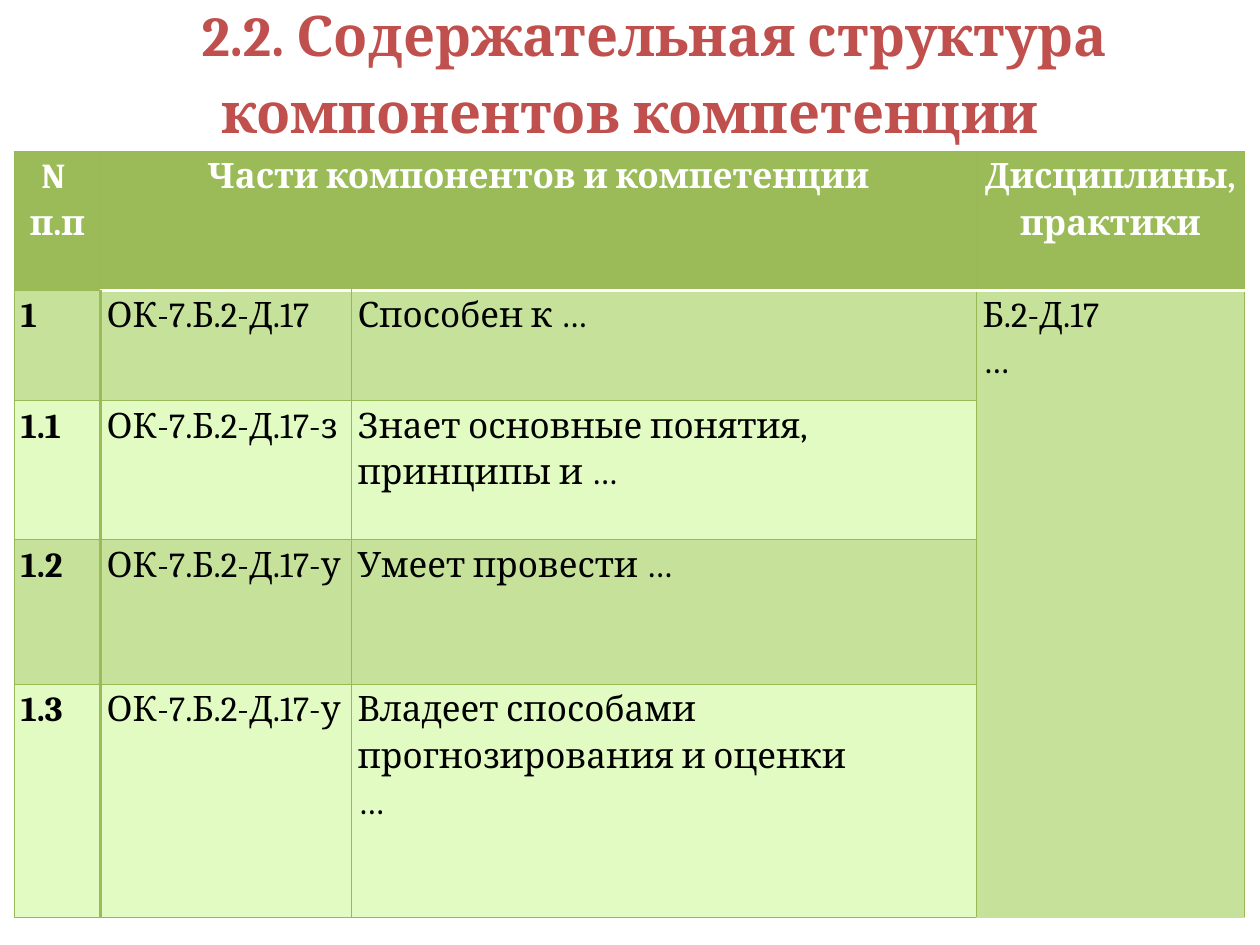
from lxml.etree import SubElement
from pptx import Presentation
from pptx.dml.color import RGBColor
from pptx.enum.text import MSO_ANCHOR, PP_ALIGN
from pptx.oxml.ns import qn
from pptx.util import Cm, Pt

HUES = {"title": "C0504D", "head": "9BBB59", "band": "C6E29A", "pale": "E2FBC2",
        "edge": "98B955", "white": "FFFFFF", "black": "000000"}


def write(frame, lines, size, hue, bold, align):
    """Put each line in its own paragraph."""
    frame.word_wrap = True
    for i, line in enumerate(lines):
        para = frame.paragraphs[0] if i == 0 else frame.add_paragraph()
        para.alignment = align
        para.line_spacing = 1.15
        for j, part in enumerate(line.split("\n")):
            if j:
                para.add_line_break()
            run = para.add_run()
            run.text = part
            run.font.name = "Cambria"
            run.font.size = Pt(size)
            run.font.bold = bold
            run.font.color.rgb = RGBColor.from_string(HUES[hue])


def rule(cell, edges):
    """Draw the left, right, top and bottom borders, given as (hue, points)."""
    props = cell._tc.get_or_add_tcPr()
    for i, (side, (hue, width)) in enumerate(zip("LRTB", edges)):
        line = SubElement(props, qn("a:ln" + side), w=str(Pt(width)))
        fill = SubElement(line, qn("a:solidFill"))
        SubElement(fill, qn("a:srgbClr"), val=HUES[hue])
        props.insert(i, line)


deck = Presentation()
deck.slide_width, deck.slide_height = Cm(25.4), Cm(19.05)
slide = deck.slides.add_slide(deck.slide_layouts[6])

# Title
title = slide.shapes.add_textbox(0, 0, Cm(25.4), Cm(2.72)).text_frame
title.vertical_anchor = MSO_ANCHOR.MIDDLE
write(title, ["2.2. Содержательная структура \nкомпонентов компетенции"],
      32, "title", True, PP_ALIGN.CENTER)
title.paragraphs[0]._p.get_or_add_pPr().set("indent", str(Cm(1.25)))

# Table
rows = [
    [["N ", "п.п"], ["Части компонентов и компетенции"], [], ["Дисциплины, ", "практики"]],
    [["1"], ["ОК-7.Б.2-Д.17"], ["Способен к …"], ["Б.2-Д.17", "…"]],
    [["1.1"], ["ОК-7.Б.2-Д.17-з"], ["Знает основные понятия, принципы и …"], []],
    [["1.2"], ["ОК-7.Б.2-Д.17-у"], ["Умеет провести …"], []],
    [["1.3"], ["ОК-7.Б.2-Д.17-у"],
     ["Владеет способами прогнозирования и оценки", "…"], []],
]
wide = [1.73, 5.06, 12.6, 5.41]
high = [2.8, 2.23, 2.8, 2.92, 4.69]
table = slide.shapes.add_table(len(rows), len(wide), Cm(0.29), Cm(3.05),
                               Cm(sum(wide)), Cm(sum(high))).table
table.first_row = table.horz_banding = False
for col, size in zip(table.columns, wide):
    col.width = Cm(size)
for row, size in zip(table.rows, high):
    row.height = Cm(size)
table.cell(0, 1).merge(table.cell(0, 2))
table.cell(1, 3).merge(table.cell(4, 3))

thin, thick, white = ("edge", 0.75), ("head", 2), ("white", 2)
for r, row in enumerate(rows):
    for c, lines in enumerate(row):
        cell = table.cell(r, c)
        head, last = r == 0, c == 3
        hue = "head" if head else "band" if last or r % 2 else "pale"
        cell.fill.solid()
        cell.fill.fore_color.rgb = RGBColor.from_string(HUES[hue])
        cell.margin_left = cell.margin_right = Cm(0.13)
        cell.margin_top = cell.margin_bottom = 0
        write(cell.text_frame, lines, 20, "white" if head else "black",
              head or c == 0, PP_ALIGN.CENTER if head else PP_ALIGN.LEFT)
        inner = ("band", 0.75) if last else thin
        under = white if c else thin
        left = thick if c == 1 and not head else thin
        right = thick if c == 0 and not head else thin
        top = thin if head else under if r == 1 else inner
        foot = under if head else thin if r == 4 else inner
        rule(cell, [left, right, top, foot])

deck.save("out.pptx")
